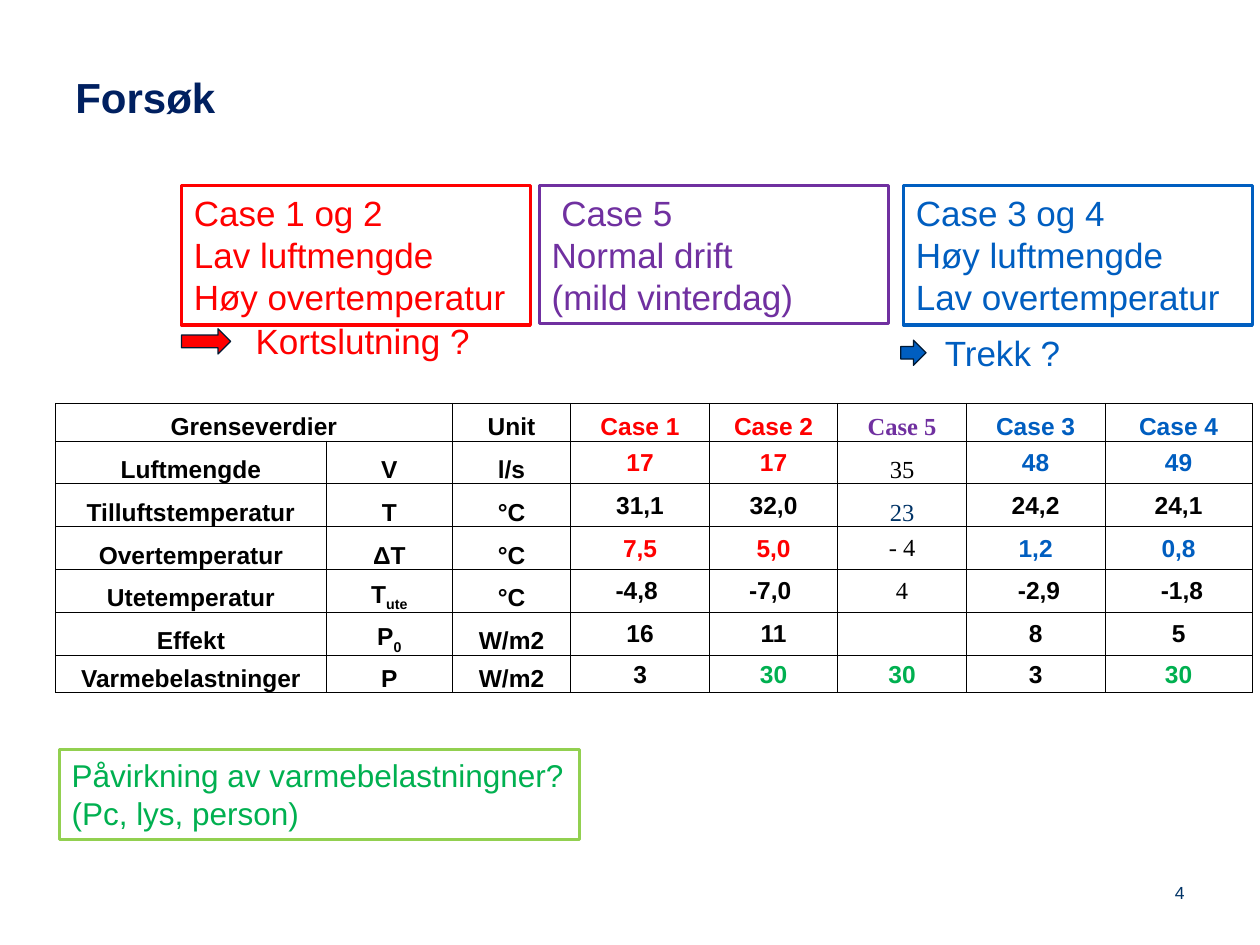
import pptx
import pptx.dml.color
import pptx.enum.shapes
import pptx.enum.text
import pptx.oxml.ns
import pptx.util
from lxml import etree

Inches = pptx.util.Inches
Pt = pptx.util.Pt
ANCHOR = pptx.enum.text.MSO_ANCHOR
ALIGN = pptx.enum.text.PP_ALIGN
SHAPE = pptx.enum.shapes.MSO_SHAPE

COLORS = {
    "black": "000000",
    "title": "002060",
    "navy": "003366",
    "outline": "001933",
    "red": "FF0000",
    "blue": "005EC0",
    "purple": "7030A0",
    "green": "00B050",
    "lime": "92D050",
}

COLUMN_WIDTHS = [2.15, 1, 0.94, 1.1, 1.02, 1.02, 1.1, 1.17]
ROW_HEIGHTS = [0.3] + [0.34] * 5 + [0.3]
CASE_COLORS = {3: "red", 4: "red", 5: "purple", 6: "blue", 7: "blue"}
CASE_5 = 5
HIGHLIGHTED_ROWS = ("Luftmengde", "Overtemperatur")
LIMITS = [
    ["Grenseverdier", "", "Unit", "Case 1", "Case 2", "Case 5", "Case 3", "Case 4"],
    ["Luftmengde", "V", "l/s", "17", "17", "35", "48", "49"],
    ["Tilluftstemperatur", "T", "°C", "31,1", "32,0", "23", "24,2", "24,1"],
    ["Overtemperatur", "ΔT", "°C", "7,5", "5,0", "- 4", "1,2", "0,8"],
    ["Utetemperatur", "T_ute", "°C", "-4,8 ", "-7,0 ", "4", " -2,9", " -1,8"],
    ["Effekt", "P_0", "W/m2", "16", "11", "", "8", "5"],
    ["Varmebelastninger", "P", "W/m2", "3", "30", "30", "3", "30"],
]


def rgb(name):
    return pptx.dml.color.RGBColor.from_string(COLORS[name])


def style_font(font, size, color, bold=False, name="Arial"):
    font.name = name
    font.size = Pt(size)
    font.bold = bold
    font.color.rgb = rgb(color)


def write_text(shape, text, size, color, bold=False, anchor=ANCHOR.TOP, align=ALIGN.LEFT):
    frame = shape.text_frame
    frame.word_wrap = True
    frame.vertical_anchor = anchor
    frame.text = text
    for paragraph in frame.paragraphs:
        paragraph.alignment = align
        for run in paragraph.runs:
            style_font(run.font, size, color, bold)


def add_label(shapes, box, text, size, color, **options):
    label = shapes.add_textbox(*map(Inches, box))
    write_text(label, text, size, color, **options)


def add_box(slide, box, text, size, color, line_color, anchor=ANCHOR.TOP):
    shape = slide.shapes.add_shape(SHAPE.RECTANGLE, *map(Inches, box))
    shape.shadow.inherit = False
    shape.fill.background()
    shape.line.color.rgb = rgb(line_color)
    shape.line.width = Pt(1.75)
    write_text(shape, text, size, color, anchor=anchor)


def add_consequence(slide, label_box, arrow_box, text, color):
    group = slide.shapes.add_group_shape()
    add_label(group.shapes, label_box, text, 20, color)
    arrow = group.shapes.add_shape(SHAPE.RIGHT_ARROW, *map(Inches, arrow_box))
    arrow.shadow.inherit = False
    arrow.fill.solid()
    arrow.fill.fore_color.rgb = rgb(color)
    arrow.line.color.rgb = rgb("outline")
    arrow.line.width = Pt(0.75)


def add_borders(cell):
    qn = pptx.oxml.ns.qn
    properties = cell._tc.get_or_add_tcPr()
    for side in ("a:lnL", "a:lnR", "a:lnT", "a:lnB"):
        line = etree.SubElement(properties, qn(side), w=str(Pt(0.5)))
        fill = etree.SubElement(line, qn("a:solidFill"))
        etree.SubElement(fill, qn("a:srgbClr"), val=COLORS["black"])


def value_color(row, column):
    value = LIMITS[row][column]
    if value == "30":
        return "green"
    if value == "23":
        return "navy"
    if row == 0:
        return CASE_COLORS.get(column, "black")
    if LIMITS[row][0] in HIGHLIGHTED_ROWS and column != CASE_5:
        return CASE_COLORS.get(column, "black")
    return "black"


def fill_cell(cell, row, column):
    value = LIMITS[row][column]
    cell.margin_left = cell.margin_right = cell.margin_top = Inches(0.01)
    cell.margin_bottom = 0
    at_bottom = row == 0 or column < 3 or (column == CASE_5 and row < 3)
    cell.vertical_anchor = ANCHOR.BOTTOM if at_bottom else ANCHOR.MIDDLE
    add_borders(cell)
    cell.fill.background()

    serif = column == CASE_5 and value != "30"
    name = "Times New Roman" if serif else "Arial"
    bold = row == 0 or not serif
    paragraph = cell.text_frame.paragraphs[0]
    paragraph.alignment = ALIGN.CENTER
    if not value:
        paragraph.font.size = Pt(14)
        return
    for index, part in enumerate(value.split("_")):
        run = paragraph.add_run()
        run.text = part
        style_font(run.font, 14, value_color(row, column), bold, name)
        if index:
            run.font._element.set("baseline", "-25000")


def add_limits_table(slide):
    frame = slide.shapes.add_table(
        len(LIMITS), len(COLUMN_WIDTHS), Inches(0.44), Inches(3.2),
        Inches(sum(COLUMN_WIDTHS)), Inches(sum(ROW_HEIGHTS)))
    table = frame.table
    table.first_row = table.horz_banding = False
    for column, width in zip(table.columns, COLUMN_WIDTHS):
        column.width = Inches(width)
    for row, height in zip(table.rows, ROW_HEIGHTS):
        row.height = Inches(height)
    table.cell(0, 0).merge(table.cell(0, 1))
    for row in range(len(LIMITS)):
        for column in range(len(COLUMN_WIDTHS)):
            fill_cell(table.cell(row, column), row, column)


def main():
    presentation = pptx.Presentation()
    presentation.slide_width = Inches(10)
    presentation.slide_height = Inches(7.5)
    slide = presentation.slides.add_slide(presentation.slide_layouts[6])

    add_label(slide.shapes, (7.17, 6.95, 2.33, 0.4), "4", 10, "navy", align=ALIGN.RIGHT)
    add_label(slide.shapes, (0.5, 0.14, 9, 1.25), "Forsøk", 24, "title",
              bold=True, anchor=ANCHOR.MIDDLE)

    add_box(slide, (1.44, 1.47, 2.77, 1.11),
            "Case 1 og 2\nLav luftmengde\nHøy overtemperatur", 20, "red", "red")
    add_box(slide, (7.17, 1.47, 2.77, 1.11),
            "Case 3 og 4\nHøy luftmengde\nLav overtemperatur", 20, "blue", "blue")
    add_consequence(slide, (1.93, 2.49, 3.46, 0.44), (1.44, 2.61, 0.39, 0.2),
                    "Kortslutning ?", "red")
    add_consequence(slide, (7.4, 2.58, 1.73, 0.44), (7.15, 2.7, 0.2, 0.2),
                    "Trekk ?", "blue")
    add_box(slide, (0.47, 5.95, 4.13, 0.71),
            "Påvirkning av varmebelastningner? (Pc, lys, person)", 18, "green", "lime")
    add_limits_table(slide)
    add_box(slide, (4.28, 1.47, 2.77, 1.1),
            " Case 5\nNormal drift\n(mild vinterdag)", 20, "purple", "purple",
            anchor=ANCHOR.MIDDLE)

    presentation.save("out.pptx")


if __name__ == "__main__":
    main()
